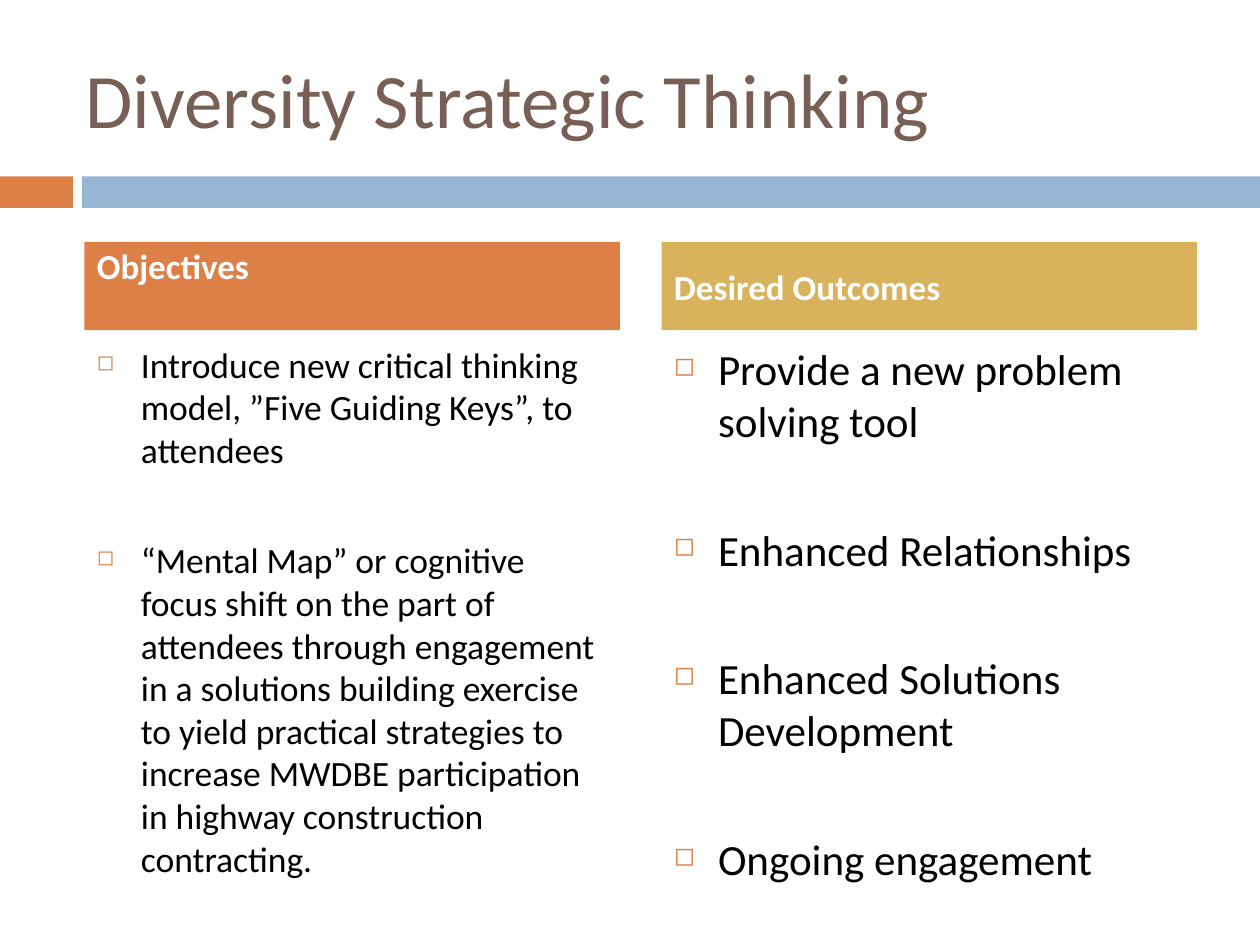
from dataclasses import dataclass

from lxml import etree
from pptx import Presentation
from pptx.dml.color import RGBColor
from pptx.enum.shapes import MSO_SHAPE
from pptx.enum.text import MSO_ANCHOR, PP_ALIGN
from pptx.oxml.ns import qn
from pptx.util import Inches, Pt

RECT = MSO_SHAPE.RECTANGLE
TOP, MIDDLE = MSO_ANCHOR.TOP, MSO_ANCHOR.MIDDLE
LEFT = PP_ALIGN.LEFT

ORANGE = RGBColor(0xDD, 0x80, 0x47)
BLUE = RGBColor(0x94, 0xB6, 0xD2)
GOLD = RGBColor(0xD8, 0xB2, 0x5C)
BROWN = RGBColor(0x77, 0x5F, 0x55)
WHITE = RGBColor(0xFF, 0xFF, 0xFF)
BLACK = RGBColor(0x00, 0x00, 0x00)

FONT = "Calibri"
SLIDE_W, SLIDE_H = 10, 7.5
COL_LEFT, COL_PITCH, COL_W = 0.67, 4.58, 4.25
BAND_TOP, BAND_H = 1.4, 0.25
HEADER_TOP, HEADER_H = 1.92, 0.7
BODY_TOP, BODY_H = 2.67, 3.92
INDENT = 0.35
LINE_HEIGHT = 1.22


@dataclass
class Column:
    header: str
    fill: RGBColor
    anchor: MSO_ANCHOR
    size: float
    items: list[str]


COLUMNS = [
    Column("Objectives", ORANGE, TOP, 20.3, [
        "Introduce new critical thinking model, ”Five Guiding Keys”, to attendees",
        "“Mental Map” or cognitive focus shift on the part of attendees through "
        "engagement in a solutions building exercise to yield practical strategies "
        "to increase MWDBE participation in highway construction contracting.",
    ]),
    Column("Desired Outcomes", GOLD, MIDDLE, 24.6, [
        "Provide a new problem solving tool",
        "Enhanced Relationships",
        "Enhanced Solutions Development",
        "Ongoing engagement",
    ]),
]


def add_rect(s, left: float, top: float, width: float, height: float, fill: RGBColor):
    sp = s.shapes.add_shape(RECT, Inches(left), Inches(top), Inches(width), Inches(height))
    sp.shadow.inherit = False
    sp.fill.solid()
    sp.fill.fore_color.rgb = fill
    sp.line.fill.background()
    return sp


def add_box(s, left: float, top: float, width: float, height: float):
    return s.shapes.add_textbox(Inches(left), Inches(top), Inches(width), Inches(height))


def write(sp, lines: list[str], size: float, color: RGBColor, anchor: MSO_ANCHOR,
          bold: bool = False) -> None:
    tf = sp.text_frame
    tf.word_wrap = True
    tf.vertical_anchor = anchor
    tf.text = "\n".join(lines)
    for p in tf.paragraphs:
        p.alignment = LEFT
        p.font.name = FONT
        p.font.size = Pt(size)
        p.font.bold = bold
        p.font.color.rgb = color


def add_bullet(p) -> None:
    """Give the paragraph a hanging, small orange square."""
    pPr = p._p.get_or_add_pPr()
    pPr.set("marL", str(Inches(INDENT)))
    pPr.set("indent", str(-Inches(INDENT)))
    bullet_color = etree.Element(qn("a:buClr"))
    etree.SubElement(bullet_color, qn("a:srgbClr"), val=str(ORANGE))
    bullet_size = etree.Element(qn("a:buSzPct"), val="60000")
    bullet_char = etree.Element(qn("a:buChar"), char="◻")
    # Bullet settings must stand between the spacing and the font defaults.
    for element in (bullet_color, bullet_size, bullet_char):
        pPr.find(qn("a:defRPr")).addprevious(element)


def add_column(s, index: int, col: Column) -> None:
    left = COL_LEFT + index * COL_PITCH
    body = add_box(s, left, BODY_TOP, COL_W, BODY_H)
    write(body, col.items, col.size, BLACK, TOP)
    for i, p in enumerate(body.text_frame.paragraphs):
        if i:
            p.space_before = Pt(round(14 + LINE_HEIGHT * col.size, 1))
        add_bullet(p)
    header = add_rect(s, left, HEADER_TOP, COL_W, HEADER_H, col.fill)
    header.text_frame.margin_top = Inches(0.02 if col.anchor == TOP else 0.05)
    write(header, [col.header], 20, WHITE, col.anchor, bold=True)


def main() -> None:
    prs = Presentation()
    prs.slide_width, prs.slide_height = Inches(SLIDE_W), Inches(SLIDE_H)
    s = prs.slides.add_slide(prs.slide_layouts[6])
    add_rect(s, 0, BAND_TOP, 0.58, BAND_H, ORANGE)
    add_rect(s, 0.65, BAND_TOP, SLIDE_W - 0.65, BAND_H, BLUE)
    title = add_box(s, 0.58, 0.3, 8.92, 0.95)
    write(title, ["Diversity Strategic Thinking"], 44, BROWN, MIDDLE)
    for index, col in enumerate(COLUMNS):
        add_column(s, index, col)
    prs.save("out.pptx")


if __name__ == "__main__":
    main()
